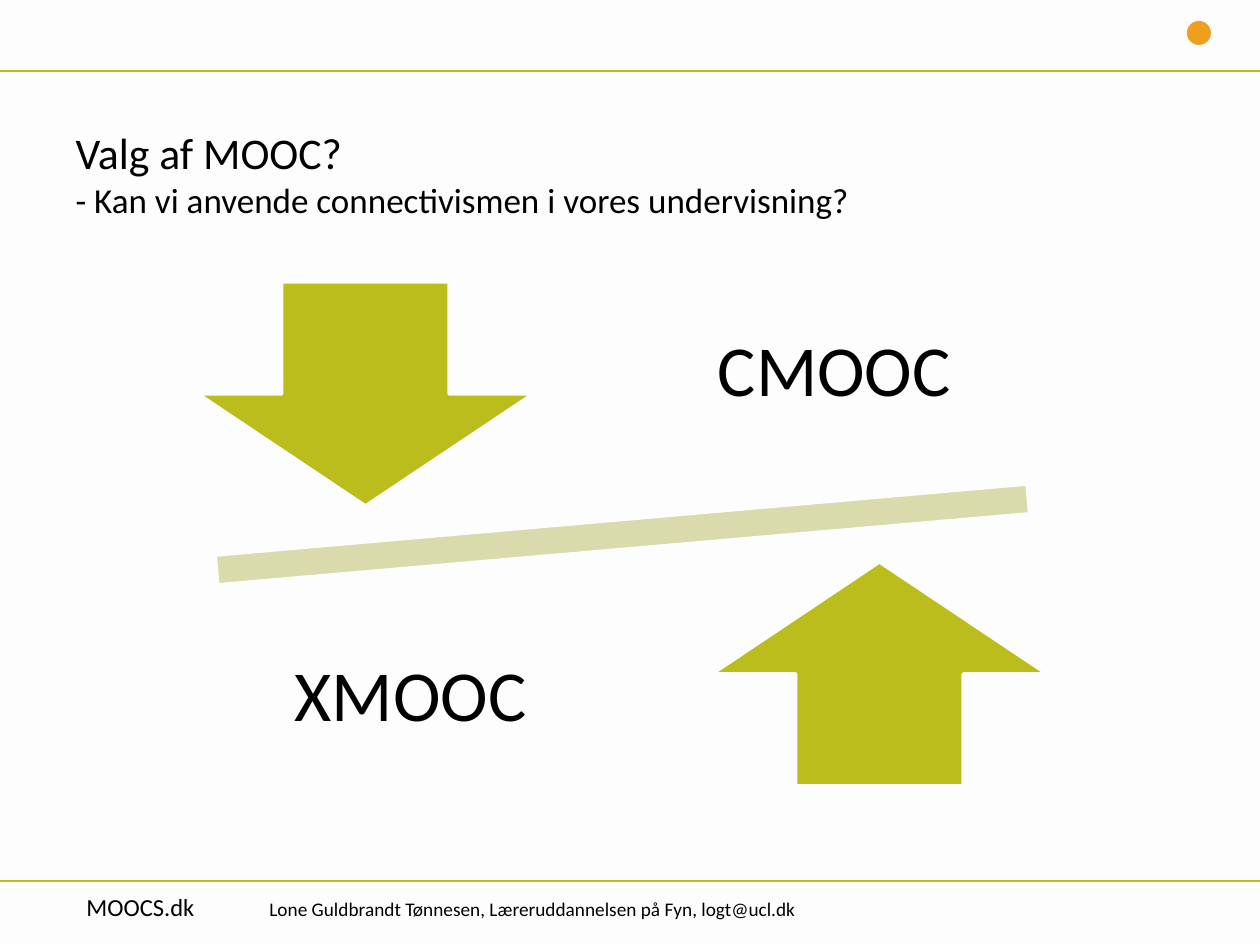
from lxml.etree import SubElement
from pptx import Presentation
from pptx.dml.color import RGBColor
from pptx.enum.shapes import MSO_CONNECTOR as Link, MSO_SHAPE as Kind
from pptx.enum.text import MSO_ANCHOR as Anchor, MSO_AUTO_SIZE as Fit, PP_ALIGN as Align
from pptx.oxml.ns import qn
from pptx.util import Pt

# Content: texts with sizes, then places in px
TITLE = [("Valg af MOOC?", 25),
         ("- Kan vi anvende connectivismen i vores undervisning?", 20)]
FOOTER = [("MOOCS.dk", 14),
          ("\tLone Guldbrandt Tønnesen, Læreruddannelsen på Fyn, logt@ucl.dk", 11)]
LABELS = [("CMOOC", 656, 255), ("XMOOC", 232, 580)]
ARROWS = [(Kind.DOWN_ARROW, 198, 282), (Kind.UP_ARROW, 712, 562)]
RULES = [71, 881]

LIME, OLIVE, PALE = "BBBD17", "BBBD1C", "DADBAC"
ORANGE, PAPER, INK = "F09E1E", "FDFDFD", "000000"


def px(n):
    return round(n * 914400 / 126)


def rgb(hex):
    return RGBColor.from_string(hex)


def box(*at):
    return [px(n) for n in at]


def shape(kind, at, fill, edge=None, turn=0):
    item = slide.shapes.add_shape(kind, *box(*at))
    item.shadow.inherit = False
    item.fill.solid()
    item.fill.fore_color.rgb = rgb(fill)
    if edge:
        item.line.color.rgb = rgb(edge)
        item.line.width = Pt(2)
    else:
        item.line.fill.background()
    item.rotation = turn


def style(font, size=None):
    font.name = "Calibri"
    font.color.rgb = rgb(INK)
    if size:
        font.size = Pt(size)


def run(para, text, size):
    part = para.add_run()
    part.text = text
    part.font.size = Pt(size)


deck = Presentation()
deck.slide_width, deck.slide_height = box(1260, 945)
slide = deck.slides.add_slide(deck.slide_layouts[5])
slide.background.fill.solid()
slide.background.fill.fore_color.rgb = rgb(PAPER)

# Frame: dot and two rules
shape(Kind.OVAL, (1187, 21, 24, 24), ORANGE)
for y in RULES:
    rule = slide.shapes.add_connector(Link.STRAIGHT, *box(0, y, 1260, y))
    rule.line.color.rgb = rgb(LIME)
    rule.line.width = Pt(1)
    SubElement(rule._element.spPr, qn("a:effectLst"))

# Footer with a tab stop
frame = slide.shapes.add_textbox(*box(74, 886, 834, 43)).text_frame
frame.word_wrap = True
para = frame.paragraphs[0]
tabs = SubElement(para._p.get_or_add_pPr(), qn("a:tabLst"))
SubElement(tabs, qn("a:tab"), pos=str(px(183)), algn="l")
style(para.font)
for text, size in FOOTER:
    run(para, text, size)

# Title
title = slide.shapes.title
title.left, title.top, title.width, title.height = box(63, 126, 1116, 89)
frame = title.text_frame
frame.auto_size = Fit.NONE
frame.vertical_anchor = Anchor.TOP
frame.margin_top = 0
para = frame.paragraphs[0]
para.alignment = Align.LEFT
style(para.font)
for i, (text, size) in enumerate(TITLE):
    if i:
        para.add_line_break()
    run(para, text, size)

# Seesaw: plank, arrows and labels
shape(Kind.MATH_MINUS, (68, 471, 1109, 127), PALE, PAPER, 355)
for kind, x, y in ARROWS:
    shape(kind, (x, y, 335, 224), OLIVE, PAPER)
for text, x, y in LABELS:
    frame = slide.shapes.add_textbox(*box(x, y, 357, 236)).text_frame
    frame.word_wrap = True
    frame.vertical_anchor = Anchor.MIDDLE
    frame.margin_left = frame.margin_right = px(40)
    frame.margin_top = frame.margin_bottom = px(40)
    para = frame.paragraphs[0]
    para.text = text
    para.alignment = Align.CENTER
    para.line_spacing = 0.9
    style(para.font, 41)

deck.save("out.pptx")
